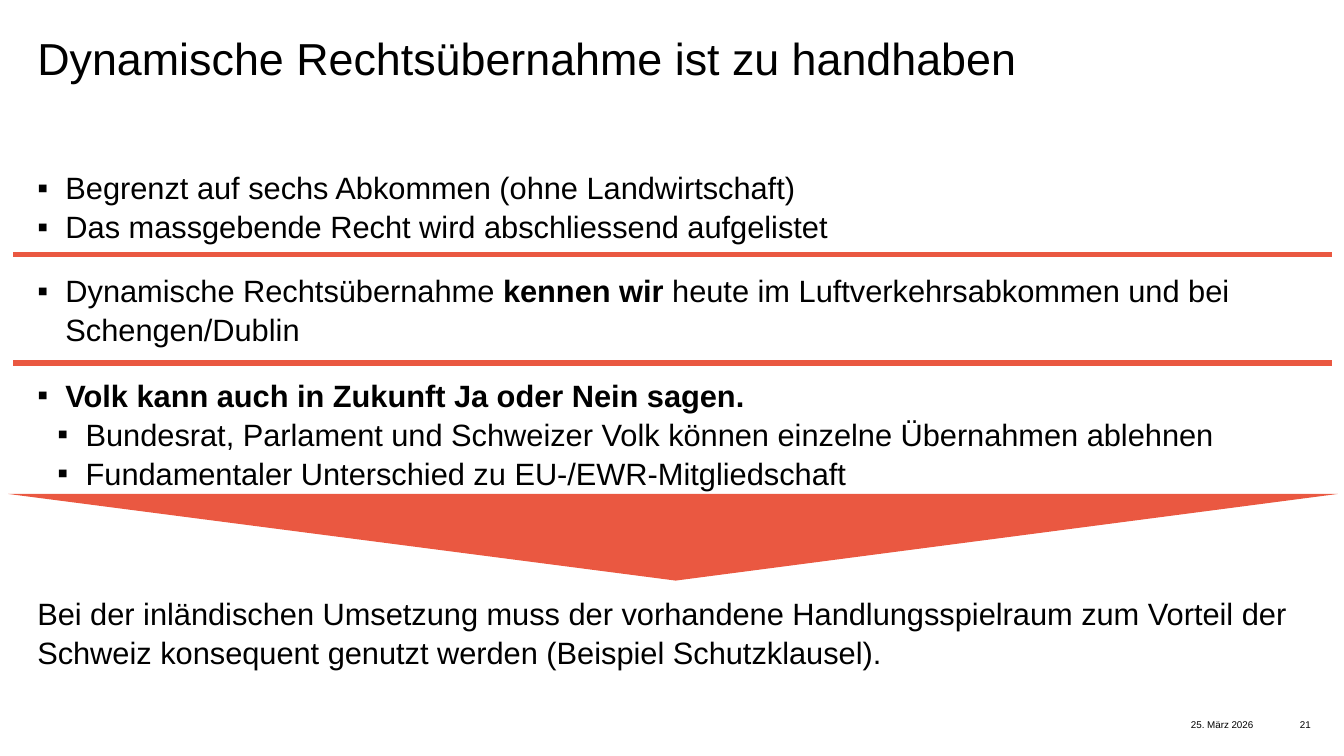
from lxml import etree
from pptx import Presentation
from pptx import util as u
from pptx.dml.color import RGBColor
from pptx.enum import shapes, text
from pptx.oxml.ns import qn

WIDTH, HEIGHT = 13.33, 7.5
LEFT, COLUMN = 0.37, 12.6  # text column
INDENT, LEVEL_STEP, TAB = 0.28, 0.2, 0.39
FONT, BLACK, CORAL = "Arial", "000000", "EA5841"
BODY_SIZE = 22


def colour(hex_code):
    return RGBColor.from_string(hex_code)


def place(item, left, top, width, height):
    item.left, item.top = u.Inches(left), u.Inches(top)
    item.width, item.height = u.Inches(width), u.Inches(height)


def prepare_frame(frame):
    frame.margin_left = frame.margin_right = 0
    frame.margin_top = frame.margin_bottom = 0
    frame.word_wrap = True
    frame.vertical_anchor = text.MSO_ANCHOR.TOP


def add_list_format(para, bullet, level):
    """Set bullet, hanging indent and tab stop of a body paragraph."""
    properties = para._p.get_or_add_pPr()
    if bullet:
        para.level = level
        margin = INDENT + level * LEVEL_STEP
        properties.set("marL", str(u.Inches(margin)))
        properties.set("indent", str(-u.Inches(INDENT)))
        etree.SubElement(properties, qn("a:buFont"), typeface=FONT)
        etree.SubElement(properties, qn("a:buChar"), char="▪")
    tabs = etree.SubElement(properties, qn("a:tabLst"))
    etree.SubElement(tabs, qn("a:tab"), pos=str(u.Inches(TAB)), algn="l")


def write(para, content, size=BODY_SIZE, spacing=1.05, align=text.PP_ALIGN.LEFT):
    """Fill a paragraph; every second part between ** marks is bold."""
    para.alignment = align
    para.line_spacing = spacing
    para.space_before = para.space_after = u.Pt(0)
    for number, part in enumerate(content.split("**")):
        if part:
            span = para.add_run()
            span.text = part
            span.font.name, span.font.size = FONT, u.Pt(size)
            span.font.bold = number % 2 == 1
            span.font.color.rgb = colour(BLACK)


def add_title(page, content):
    title = page.shapes.title
    place(title, LEFT, 0.39, COLUMN, 0.43)
    prepare_frame(title.text_frame)
    title.text_frame.auto_size = text.MSO_AUTO_SIZE.NONE
    write(title.text_frame.paragraphs[0], content, size=32, spacing=0.84)


def add_box(page, left, top, width, height):
    box = page.shapes.add_textbox(0, 0, 0, 0)
    place(box, left, top, width, height)
    prepare_frame(box.text_frame)
    return box.text_frame


def add_body(page, top, height, lines, bullet=True):
    """Add a body block from (level, content) pairs."""
    frame = add_box(page, LEFT, top, COLUMN, height)
    frame.auto_size = text.MSO_AUTO_SIZE.SHAPE_TO_FIT_TEXT
    for number, (level, content) in enumerate(lines):
        para = frame.add_paragraph() if number else frame.paragraphs[0]
        add_list_format(para, bullet, level)
        write(para, content)


def add_footer(page, right, width, content):
    frame = add_box(page, right - width, 7.14, width, 0.1)
    write(frame.paragraphs[0], content, size=7, spacing=0.9,
          align=text.PP_ALIGN.RIGHT)


def add_coral_shape(page, kind, left, top, width, height):
    shape = page.shapes.add_shape(kind, 0, 0, 0, 0)
    place(shape, left, top, width, height)
    shape.shadow.inherit = False
    shape.fill.solid()
    shape.fill.fore_color.rgb = colour(CORAL)
    shape.line.fill.background()
    return shape


def main():
    deck = Presentation()
    deck.slide_width, deck.slide_height = u.Inches(WIDTH), u.Inches(HEIGHT)
    page = deck.slides.add_slide(deck.slide_layouts[5])
    add_title(page, "Dynamische Rechtsübernahme ist zu handhaben")

    # Separators and downward arrowhead
    for top in (2.4, 3.48):
        add_coral_shape(page, shapes.MSO_SHAPE.MATH_MINUS, -2.23, top, 17.8, 0.25)
    arrow = add_coral_shape(page, shapes.MSO_SHAPE.ISOSCELES_TRIANGLE,
                            0.08, 4.9, 13.19, 0.86)
    arrow.adjustments[0] = 0.498
    arrow.rotation = 180

    # Arguments
    add_body(page, 1.66, 1.08, [
        (0, "Begrenzt auf sechs Abkommen (ohne Landwirtschaft)"),
        (0, "Das massgebende Recht wird abschliessend aufgelistet"),
    ])
    add_body(page, 2.68, 0.74, [
        (0, "Dynamische Rechtsübernahme **kennen wir **heute im "
            "Luftverkehrsabkommen und bei Schengen/Dublin"),
    ])
    add_body(page, 3.72, 1.45, [
        (0, "**Volk kann auch in Zukunft Ja oder Nein sagen.**"),
        (1, "Bundesrat, Parlament und Schweizer Volk können einzelne "
            "Übernahmen ablehnen"),
        (1, "Fundamentaler Unterschied zu EU-/EWR-Mitgliedschaft"),
    ])

    # Conclusion
    add_body(page, 5.88, 0.74, [
        (0, "Bei der inländischen Umsetzung muss der vorhandene "
            "Handlungsspielraum zum Vorteil der Schweiz konsequent genutzt "
            "werden (Beispiel Schutzklausel)."),
    ], bullet=False)

    # Date and page number
    add_footer(page, 12.43, 5.75, "25. März 2026")
    add_footer(page, 13, 0.24, "21")
    deck.save("out.pptx")


if __name__ == "__main__":
    main()
